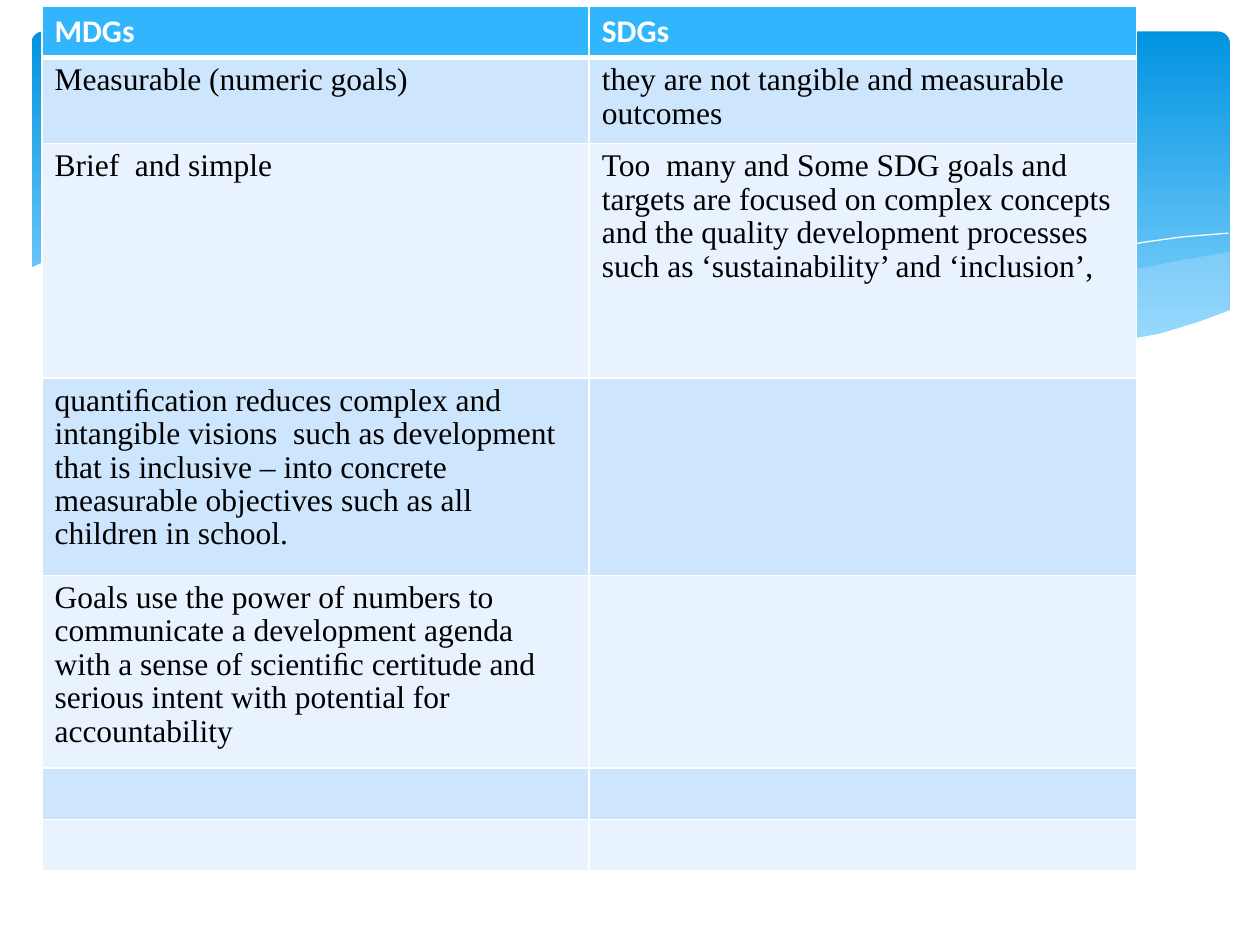
from dataclasses import dataclass

from lxml import etree
from pptx import Presentation
from pptx.dml.color import RGBColor
from pptx.enum.shapes import MSO_SHAPE
from pptx.oxml.ns import qn
from pptx.util import Pt

ROUNDED = MSO_SHAPE.ROUNDED_RECTANGLE


@dataclass(frozen=True)
class Theme:
    white: str = "FFFFFF"
    black: str = "000000"
    header: str = "31B6FD"
    bands: tuple = ("CEE5FE", "E8F3FF")
    panel_top: str = "0293E0"
    panel_bottom: str = "83D3FE"
    wave: str = "C6E7FC"
    header_font: str = "Calibri"
    body_font: str = "Times New Roman"
    size: float = 18


THEME = Theme()

BACK_WAVE = [
    (684, 126), (655.2, 131), (623.5, 137.5), (601.9, 142.6), (561.6, 152.6),
    (506.9, 164.2), (457.9, 172.8), (489.6, 177.1), (527, 180.7), (568.1, 182.2),
    (596.9, 180.7), (622.1, 177.8), (645.1, 172.8), (665.3, 167), (684.7, 159.8),
    (684.7, 126),
]
FRONT_WAVE = [
    (625, 178.6), (584.6, 172.8), (540, 164.9), (490.3, 154.8), (434.9, 141.8),
    (391.7, 131.8), (352.1, 124.6), (316.8, 119.5), (284.4, 116.6), (255.6, 115.2),
    (218.2, 116.6), (187.9, 119.5), (228.2, 125.3), (272.9, 133.9), (335.5, 149),
    (389.5, 160.6), (438.5, 169.9), (482.4, 176.4), (520.6, 180.7), (563, 182.2),
    (599, 181.4),
]
FALLING_CREST = [
    (204.5, 122.4), (229.7, 118.8), (270.7, 116.6), (319.7, 118.1), (365.8, 121.7),
    (419.8, 128.9), (482.4, 139.7), (529.2, 149.8), (580.3, 162.7), (635, 177.8),
]
RISING_CREST = [
    (423.4, 167), (465.8, 155.5), (520.6, 142.6), (562.3, 133.2), (605.5, 125.3),
    (637.2, 120.2), (657.4, 117.4), (684, 115.2),
]
WHITE_WAVE = [
    (685.4, 159.1), (666, 166.3), (644.4, 172.8), (620.6, 177.1), (594, 180),
    (564.5, 181.4), (529.9, 180), (491.8, 176.4), (448.6, 170.6), (398.9, 162),
    (344.2, 149.8), (303.8, 140.4), (244.8, 127.4), (192.2, 118.8), (147.6, 115.2),
    (109.4, 114.5), (77, 115.9), (50.4, 119.5), (30.2, 123.8), (15.1, 128.2),
    (-1.4, 135.4), (-1.4, 218.9), (685.4, 218.9),
]

ROWS = [
    (28.1, "MDGs", "SDGs"),
    (49, "Measurable (numeric goals)", "they are not tangible and measurable outcomes"),
    (134, "Brief  and simple",
     "Too  many and Some SDG goals and targets are focused on complex concepts and the "
     "quality development processes such as ‘sustainability’ and ‘inclusion’,"),
    (112.8,
     "quantiﬁcation reduces complex and intangible visions  such as development that is "
     "inclusive – into concrete measurable objectives such as all children in school.", ""),
    (110.2,
     "Goals use the power of numbers to communicate a development agenda with a sense of "
     "scientiﬁc certitude and serious intent with potential for accountability", ""),
    (28.1, "", ""),
    (28.1, "", ""),
]


def color(value):
    return RGBColor.from_string(value)


def put_text(frame, text, *, font, ink, size=THEME.size, bold=False, spacing=None):
    para = frame.paragraphs[0]
    para.line_spacing = spacing
    para.font.size = Pt(size)
    if text:
        span = para.add_run()
        span.text = text
        span.font.name = font
        span.font.size = Pt(size)
        span.font.bold = bold
        span.font.color.rgb = color(ink)


def draw_outline(page, box, points, *, fill=None, alpha=None):
    left, top = box[:2]
    start, *rest = [(Pt(left + x), Pt(top + y)) for x, y in points]
    builder = page.shapes.build_freeform(*start, scale=1.0)
    builder.add_line_segments(rest, close=fill is not None)
    shape = builder.convert_to_shape()
    shape.shadow.inherit = False
    if fill is None:
        shape.fill.background()
        shape.line.color.rgb = color(THEME.white)
        shape.line.width = Pt(0)
        return
    shape.line.fill.background()
    shape.fill.solid()
    shape.fill.fore_color.rgb = color(fill)
    if alpha is not None:
        tint = shape.fill._xPr.find(qn("a:solidFill"))[0]
        etree.SubElement(tint, qn("a:alpha"), val=str(alpha * 1000))


def draw_backdrop(page, box):
    panel = page.shapes.add_shape(ROUNDED, *map(Pt, box))
    panel.shadow.inherit = False
    panel.adjustments[0] = 0.034
    panel.line.fill.background()
    panel.fill.gradient()
    panel.fill.gradient_angle = 270
    stops = panel.fill.gradient_stops
    for stop, place, shade in zip(stops, (0, 0.9), (THEME.panel_top, THEME.panel_bottom)):
        stop.position = place
        stop.color.rgb = color(shade)
    draw_outline(page, box, BACK_WAVE, fill=THEME.wave, alpha=29)
    draw_outline(page, box, FRONT_WAVE, fill=THEME.wave, alpha=40)
    draw_outline(page, box, FALLING_CREST)
    draw_outline(page, box, RISING_CREST)
    draw_outline(page, box, WHITE_WAVE, fill=THEME.white)


def set_borders(cell, **widths):
    properties = cell._tc.get_or_add_tcPr()
    for side in "LRTB":
        width = Pt(widths.get(side, 1))
        line = etree.SubElement(properties, qn(f"a:ln{side}"), w=str(width))
        fill = etree.SubElement(line, qn("a:solidFill"))
        etree.SubElement(fill, qn("a:srgbClr"), val=THEME.white)


def draw_comparison(page, box):
    table = page.shapes.add_table(len(ROWS), 2, *map(Pt, box)).table
    for column in table.columns:
        column.width = Pt(box[2] / 2)
    for index, (height, *texts) in enumerate(ROWS):
        table.rows[index].height = Pt(height)
        for cell, text in zip(table.rows[index].cells, texts):
            set_borders(cell, T=3 if index == 1 else 1, B=3 if index == 0 else 1)
            cell.fill.solid()
            if index == 0:
                cell.fill.fore_color.rgb = color(THEME.header)
                put_text(cell.text_frame, text, font=THEME.header_font,
                         ink=THEME.white, bold=True)
            else:
                cell.fill.fore_color.rgb = color(THEME.bands[(index - 1) % 2])
                put_text(cell.text_frame, text, font=THEME.body_font,
                         ink=THEME.black, spacing=0.96 if text else None)


def main():
    deck = Presentation()
    deck.slide_width, deck.slide_height = Pt(720), Pt(540)
    page = deck.slides.add_slide(deck.slide_layouts[6])
    draw_backdrop(page, (18, 18, 684.7, 194.4))
    draw_comparison(page, (24, 3.8, 625.4, sum(row[0] for row in ROWS)))
    deck.save("out.pptx")


if __name__ == "__main__":
    main()
